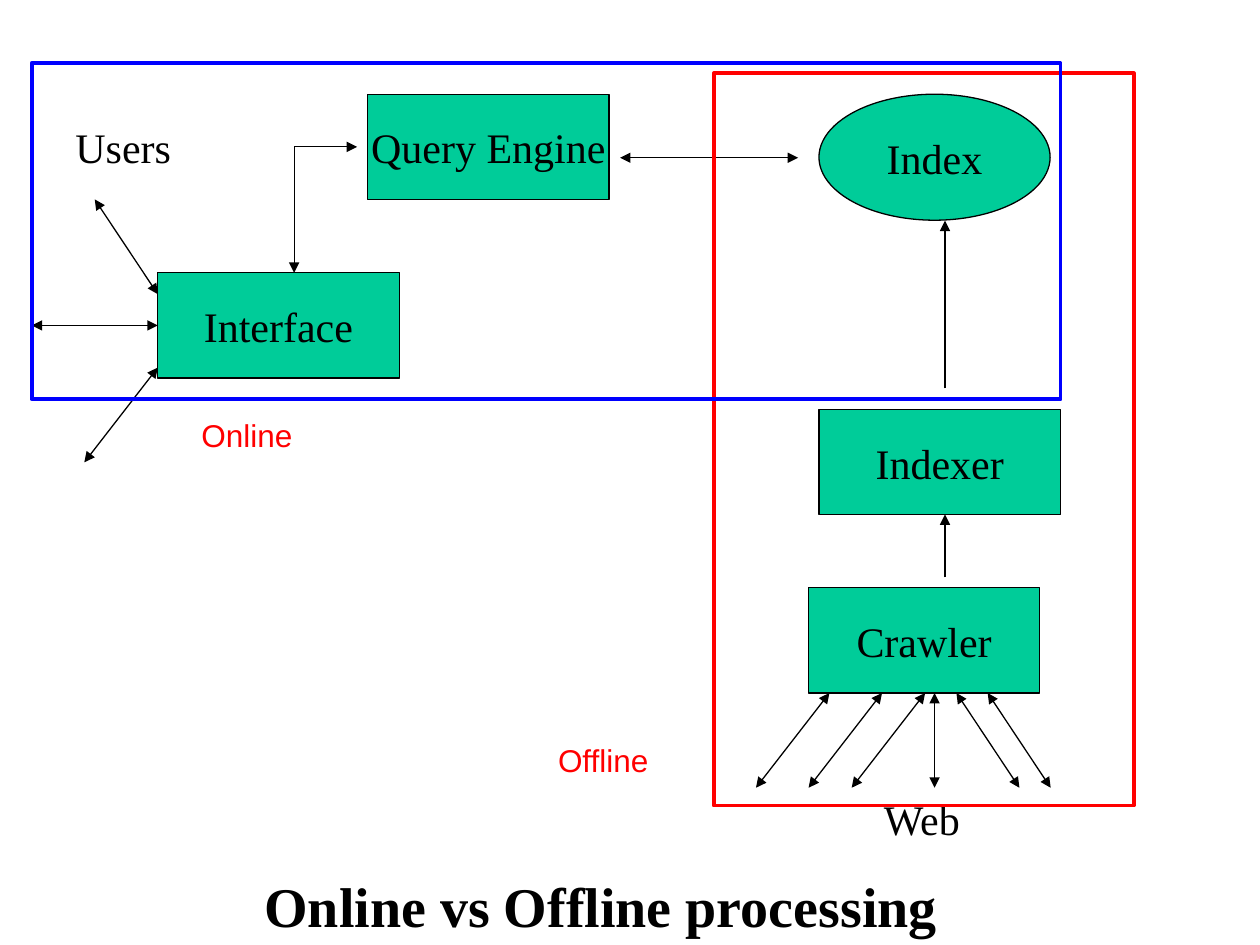
import pptx
import pptx.util
import pptx.dml.color
import pptx.enum.shapes
import pptx.enum.text
import pptx.oxml.ns
from lxml import etree

Cm = pptx.util.Cm
Pt = pptx.util.Pt
RGBColor = pptx.dml.color.RGBColor
Kind = pptx.enum.shapes.MSO_SHAPE
Align = pptx.enum.text.PP_ALIGN
Anchor = pptx.enum.text.MSO_ANCHOR
Fit = pptx.enum.text.MSO_AUTO_SIZE
qn = pptx.oxml.ns.qn

BLACK = RGBColor(0x00, 0x00, 0x00)
GREEN = RGBColor(0x00, 0xCC, 0x99)
RED = RGBColor(0xFF, 0x00, 0x00)
BLUE = RGBColor(0x00, 0x00, 0xFF)

BODY = {"name": "Times New Roman", "size": Pt(24)}
TITLE = {"name": "Times New Roman", "size": Pt(32), "bold": True}
PHASE = {"name": "Arial", "size": Pt(18)}

NODES = [
    ("Query Engine", Kind.RECTANGLE, (7.41, 1.9, 4.87, 2.12)),
    ("Interface", Kind.RECTANGLE, (3.18, 5.5, 4.87, 2.12)),
    ("Indexer", Kind.RECTANGLE, (16.51, 8.26, 4.87, 2.12)),
    ("Index", Kind.OVAL, (16.51, 1.9, 4.66, 2.54)),
    ("Crawler", Kind.RECTANGLE, (16.3, 11.85, 4.66, 2.12)),
]

TWO_WAY = [
    (12.5, 3.18, 16.09, 3.18),
    (3.18, 7.41, 1.7, 9.32),
    (1.91, 4.02, 3.18, 5.93),
    (3.18, 6.56, 0.64, 6.56),
]
ONE_WAY = [
    (5.93, 2.96, 7.2, 2.96),
    (5.93, 2.96, 5.93, 5.5),
    (19.05, 7.83, 19.05, 4.45),
    (19.05, 11.64, 19.05, 10.37),
]
CRAWL = [(16.72, -1.48), (17.78, -1.48), (18.65, -1.48),
         (18.84, 0), (19.28, 1.27), (19.91, 1.27)]
CRAWL_TOP, CRAWL_END = 13.97, 15.88

LABELS = [
    ("Users", (1.27, 2.33, 2.44, 1.27), BODY, BLACK, False),
    ("Web", (17.57, 15.88, 2.11, 1.27), BODY, BLACK, False),
    ("Online vs Offline processing", (5.08, 17.44, 14.2, 1.62), TITLE, BLACK, False),
    ("Offline", (11, 14.82, 3.18, 1.02), PHASE, RED, True),
    ("Online", (3.81, 8.26, 4.92, 1.02), PHASE, RED, True),
]

FRAMES = [
    (RED, (14.39, 1.48, 8.47, 14.76)),
    (BLUE, (0.64, 1.27, 20.74, 6.78)),
]


def write(shape, text, form, color, props):
    frame = shape.text_frame
    for key, value in props.items():
        setattr(frame, key, value)
    run = frame.paragraphs[0].add_run()
    run.text = text
    for key, value in form.items():
        setattr(run.font, key, value)
    run.font.color.rgb = color


def add_box(shapes, kind, box, color, width):
    shape = shapes.add_shape(kind, *map(Cm, box))
    shape.shadow.inherit = False
    shape.line.color.rgb = color
    shape.line.width = Pt(width)
    return shape


def add_node(shapes, text, kind, box):
    shape = add_box(shapes, kind, box, BLACK, 0.75)
    shape.fill.solid()
    shape.fill.fore_color.rgb = GREEN
    write(shape, text, BODY, BLACK,
          {"word_wrap": False, "vertical_anchor": Anchor.MIDDLE})
    shape.text_frame.paragraphs[0].alignment = Align.CENTER


def add_arrow(shapes, ends, tips):
    line = shapes.add_connector(
        pptx.enum.shapes.MSO_CONNECTOR.STRAIGHT, *map(Cm, ends))
    line.line.color.rgb = BLACK
    line.line.width = Pt(0.75)
    stroke = line.line._get_or_add_ln()
    for tip in tips:
        etree.SubElement(stroke, qn("a:" + tip), type="triangle")
    etree.SubElement(line._element.spPr, qn("a:effectLst"))


def main():
    deck = pptx.Presentation()
    deck.slide_width, deck.slide_height = Cm(25.4), Cm(19.05)
    shapes = deck.slides.add_slide(deck.slide_layouts[6]).shapes

    for node in NODES:
        add_node(shapes, *node)
    crawl = [(x, CRAWL_TOP, x + shift, CRAWL_END) for x, shift in CRAWL]
    for ends in TWO_WAY + crawl:
        add_arrow(shapes, ends, ("headEnd", "tailEnd"))
    for ends in ONE_WAY:
        add_arrow(shapes, ends, ("tailEnd",))
    for text, box, form, color, wrap in LABELS:
        label = shapes.add_textbox(*map(Cm, box))
        write(label, text, form, color,
              {"word_wrap": wrap, "auto_size": Fit.SHAPE_TO_FIT_TEXT})
    for color, box in FRAMES:
        add_box(shapes, Kind.RECTANGLE, box, color, 2.25).fill.background()

    deck.save("out.pptx")


if __name__ == "__main__":
    main()
